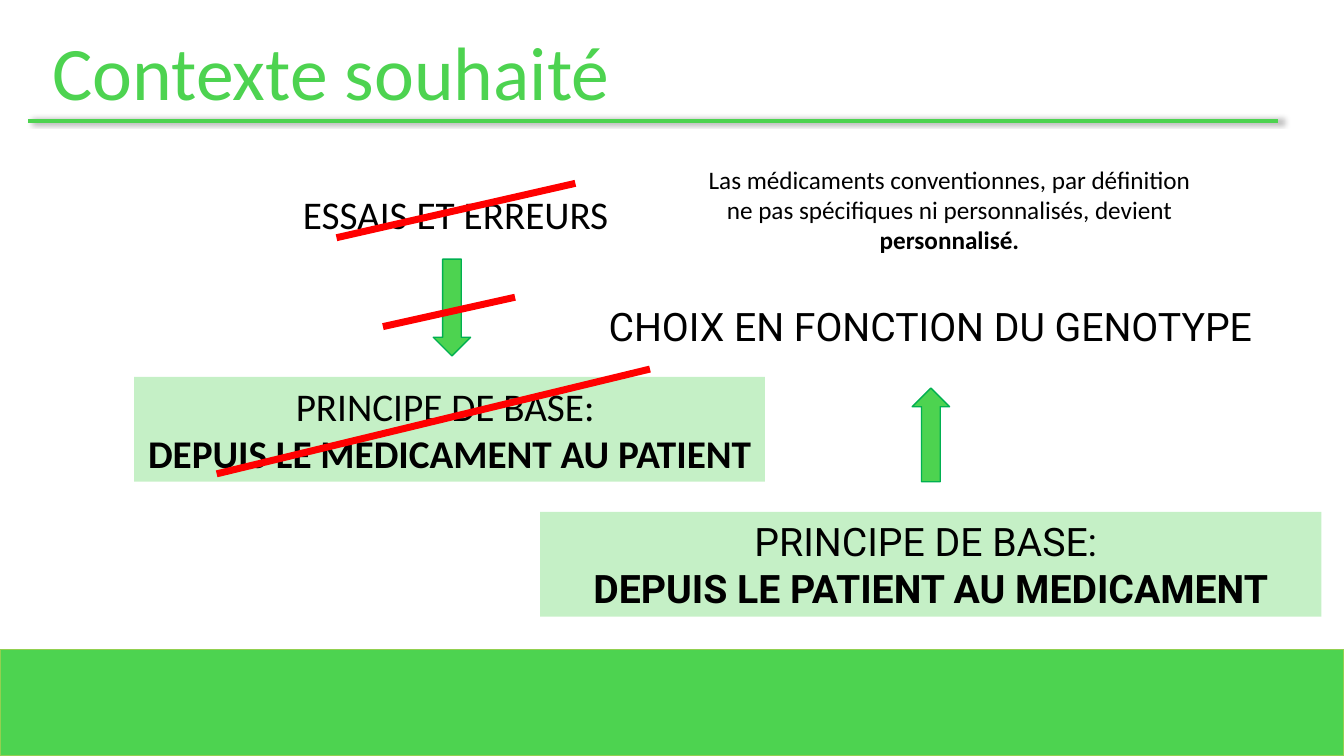
from lxml import etree
from pptx import Presentation
from pptx.dml.color import RGBColor
from pptx.enum.shapes import MSO_CONNECTOR, MSO_SHAPE
from pptx.enum.text import MSO_ANCHOR, MSO_AUTO_SIZE, PP_ALIGN
from pptx.oxml.ns import qn
from pptx.util import Cm, Pt

RECT, DOWN, UP = MSO_SHAPE.RECTANGLE, MSO_SHAPE.DOWN_ARROW, MSO_SHAPE.UP_ARROW
STRAIGHT, CENTER, TOP = MSO_CONNECTOR.STRAIGHT, PP_ALIGN.CENTER, MSO_ANCHOR.TOP
NO_AUTOFIT = MSO_AUTO_SIZE.NONE
GREEN, DARK_GREEN, LIME = "4DD350", "00B050", "92D050"
RED, BLACK = "FF0000", "000000"

# Content: places are left, top, width, height in cm; runs are (text, bold)
TITLE = ("Contexte souhaité", (0.71, 0.51, 15.27, 2.57))
BAND = (0, 16.36, 33.87, 2.69)
TITLE_RULE = (0.71, 3.05, 32.21, 3.05)
PANELS = [
    ((3.38, 9.5, 15.9, 2.64), "Calibri", "DEPUIS LE MEDICAMENT AU PATIENT"),
    ((13.61, 12.9, 19.69, 2.64), "Roboto", "DEPUIS LE PATIENT AU MEDICAMENT"),
]
PANEL_HEADING = "PRINCIPE DE BASE: "
LABELS = [
    ((4.42, 4.67, 14.12, 1.45), "Calibri", 28, [("ESSAIS ET ERREURS", False)]),
    ((14.58, 7.49, 17.73, 1.45), "Roboto", 28,
     [("CHOIX EN FONCTION DU GENOTYPE", False)]),
    ((17.35, 4.01, 13.16, 2.57), "Calibri", 18,
     [("Las médicaments conventionnes, par définition "
       "ne pas spécifiques ni personnalisés, devient ", False),
      ("personnalisé.", True)]),
]
ARROWS = [(DOWN, (10.92, 6.53, 0.94, 2.44)), (UP, (22.99, 9.78, 0.94, 2.36))]
STRIKES = [  # x1, y1, x2, y2 in cm
    (5.46, 11.94, 16.38, 9.3),
    (8.48, 5.99, 14.5, 4.62),
    (9.65, 8.23, 12.98, 7.49),
]


def color(value):
    return RGBColor.from_string(value)


def lengths(values):
    return [Cm(value) for value in values]


def write(box, paragraphs, font, size, ink=BLACK, wrap=True):
    frame = box.text_frame
    frame.auto_size = NO_AUTOFIT
    frame.word_wrap = wrap
    frame.vertical_anchor = TOP
    for index, runs in enumerate(paragraphs):
        para = frame.add_paragraph() if index else frame.paragraphs[0]
        para.alignment = CENTER
        for text, bold in runs:
            span = para.add_run()
            span.text = text
            span.font.name = font
            span.font.size = Pt(size)
            span.font.bold = bold
            span.font.color.rgb = color(ink)


def add_block(page, kind, place, outline=None):
    block = page.shapes.add_shape(kind, *lengths(place))
    block.shadow.inherit = False
    block.fill.solid()
    block.fill.fore_color.rgb = color(GREEN)
    if outline:
        block.line.color.rgb = color(outline)
        block.line.width = Pt(1)
    else:
        block.line.fill.background()
    return block


def add_line(page, ends, ink, width):
    """Draw a straight line and return its empty effect list."""
    line = page.shapes.add_connector(STRAIGHT, *lengths(ends))
    line.line.color.rgb = color(ink)
    line.line.width = Pt(width)
    return etree.SubElement(line._element.spPr, qn("a:effectLst"))


def set_alpha(parent, percent):
    etree.SubElement(parent, qn("a:alpha"), val=str(percent * 1000))


def main():
    deck = Presentation()
    deck.slide_width, deck.slide_height = Cm(33.87), Cm(19.05)
    page = deck.slides.add_slide(deck.slide_layouts[5])

    # Footer band
    add_block(page, RECT, BAND, LIME)

    # Title and its shadowed rule
    text, place = TITLE
    title = page.shapes.title
    title.left, title.top, title.width, title.height = lengths(place)
    write(title, [[(text, False)]], "Calibri", 54, GREEN, wrap=False)
    effects = add_line(page, TITLE_RULE, GREEN, 3)
    shadow = etree.SubElement(effects, qn("a:outerShdw"), blurRad=str(Pt(4)),
                              dist=str(Pt(3)), dir="0", rotWithShape="0")
    set_alpha(etree.SubElement(shadow, qn("a:srgbClr"), val=BLACK), 40)

    # Translucent principle panels
    for place, font, principle in PANELS:
        panel = add_block(page, RECT, place)
        set_alpha(panel._element.spPr.find(".//" + qn("a:srgbClr")), 32)
        write(panel, [[(PANEL_HEADING, False)], [(principle, True)]],
              font, 28, wrap=False)

    # Labels and arrows
    for place, font, size, runs in LABELS:
        write(page.shapes.add_textbox(*lengths(place)), [runs], font, size)
    for kind, place in ARROWS:
        add_block(page, kind, place, DARK_GREEN)

    # Red strikes over the rejected approach
    for ends in STRIKES:
        add_line(page, ends, RED, 5)

    deck.save("out.pptx")


if __name__ == "__main__":
    main()
